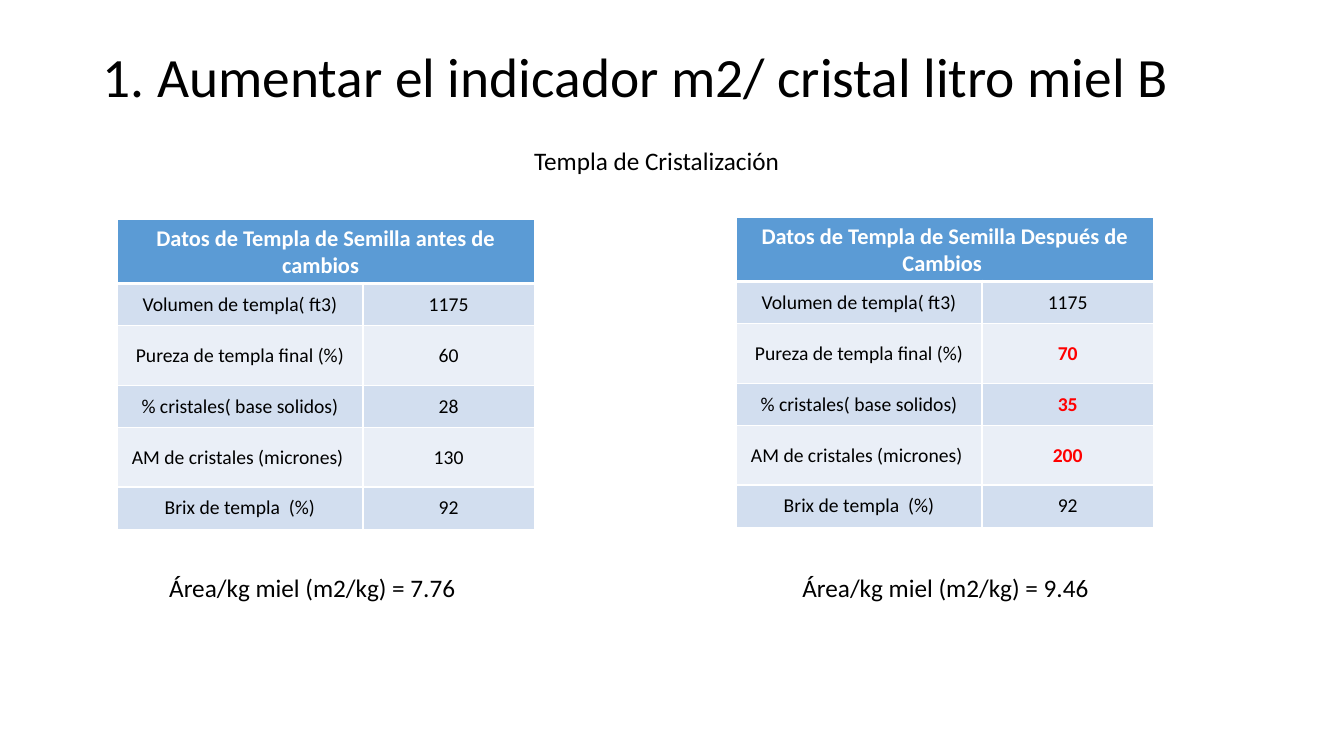
from lxml.etree import SubElement as Sub
from pptx import Presentation
from pptx.dml.color import RGBColor as RGB
from pptx.enum.text import MSO_ANCHOR as Anchor, PP_ALIGN as Align
from pptx.oxml.ns import qn
from pptx.util import Inches, Pt

BLACK = RGB(0, 0, 0)
WHITE = RGB(255, 255, 255)
RED = RGB(255, 0, 0)
BLUE = RGB(0x5B, 0x9B, 0xD5)
BANDS = [RGB(0xD2, 0xDE, 0xEF), RGB(0xEA, 0xEF, 0xF7)]

COLS = [2.44, 1.7]
ROWS = [0.63, 0.42, 0.59, 0.42, 0.59, 0.42]
LABELS = ["Volumen de templa( ft3)", "Pureza de templa final (%)",
          "% cristales( base solidos)", "AM de cristales (micrones) ",
          "Brix de templa  (%)"]
BEFORE = ["1175", "60", "28", "130", "92"]
AFTER = ["1175", "70", "35", "200", "92"]


def write(frame, text, size, color=BLACK, bold=False, align=Align.LEFT):
    para = frame.paragraphs[0]
    para.alignment = align
    run = para.add_run()
    run.text = text
    form = {"name": "Calibri", "size": Pt(size), "bold": bold}
    for key, val in form.items():
        setattr(run.font, key, val)
    run.font.color.rgb = color
    return para


def add_text(slide, box, text, size, anchor=Anchor.TOP):
    frame = slide.shapes.add_textbox(*map(Inches, box)).text_frame
    frame.word_wrap = True
    frame.vertical_anchor = anchor
    return write(frame, text, size)


def set_lines(cell, widths):
    """Draw white borders; widths maps each side to points."""
    props = cell._tc.get_or_add_tcPr()
    for side, width in widths.items():
        line = Sub(props, qn("a:ln" + side), w=str(Pt(width)))
        fill = Sub(line, qn("a:solidFill"))
        Sub(fill, qn("a:srgbClr"), val=str(WHITE))


def style(cell, fill, top=1, bottom=1):
    set_lines(cell, {"L": 1, "R": 1, "T": top, "B": bottom})
    cell.fill.solid()
    cell.fill.fore_color.rgb = fill


def add_data(slide, left, top, head, values):
    size = map(Inches, (left, top, sum(COLS), sum(ROWS)))
    table = slide.shapes.add_table(len(ROWS), len(COLS), *size).table
    for col, width in zip(table.columns, COLS):
        col.width = Inches(width)
    for row, height in zip(table.rows, ROWS):
        row.height = Inches(height)

    # Header across both columns
    for cell in table.rows[0].cells:
        style(cell, BLUE, bottom=3)
    first = table.cell(0, 0)
    first.merge(table.cell(0, 1))
    write(first.text_frame, head, 16, WHITE, True, Align.CENTER)

    # Banded body, with changed values in red
    for i, (label, value) in enumerate(zip(LABELS, values)):
        new = value != BEFORE[i]
        for j, text in enumerate((label, value)):
            cell = table.cell(i + 1, j)
            style(cell, BANDS[i % 2], top=1 if i else 3)
            cell.vertical_anchor = Anchor.MIDDLE
            mark = new and j == 1
            write(cell.text_frame, text, 14, RED if mark else BLACK,
                  mark, Align.CENTER)


def main():
    deck = Presentation()
    deck.slide_width, deck.slide_height = Inches(13.33), Inches(7.5)
    slide = deck.slides.add_slide(deck.slide_layouts[6])

    # Title and subtitle
    title = add_text(slide, (0.92, 0.4, 11.5, 0.78),
                     "1. Aumentar el indicador m2/ cristal litro miel B",
                     39.6, Anchor.MIDDLE)
    title.line_spacing = 0.9
    add_text(slide, (5.2, 1.39, 2.94, 0.4), "Templa de Cristalización", 18)

    # Data before and after the changes
    add_data(slide, 1.16, 2.18,
             "Datos de Templa de Semilla antes de cambios  ", BEFORE)
    add_data(slide, 7.3, 2.16,
             "Datos de Templa de Semilla Después de Cambios ", AFTER)

    # Resulting areas
    for left, area in ((1.58, "7.76"), (7.86, "9.46")):
        add_text(slide, (left, 5.63, 4.12, 0.4),
                 f"Área/kg miel (m2/kg) = {area}", 18)

    deck.save("out.pptx")


if __name__ == "__main__":
    main()
